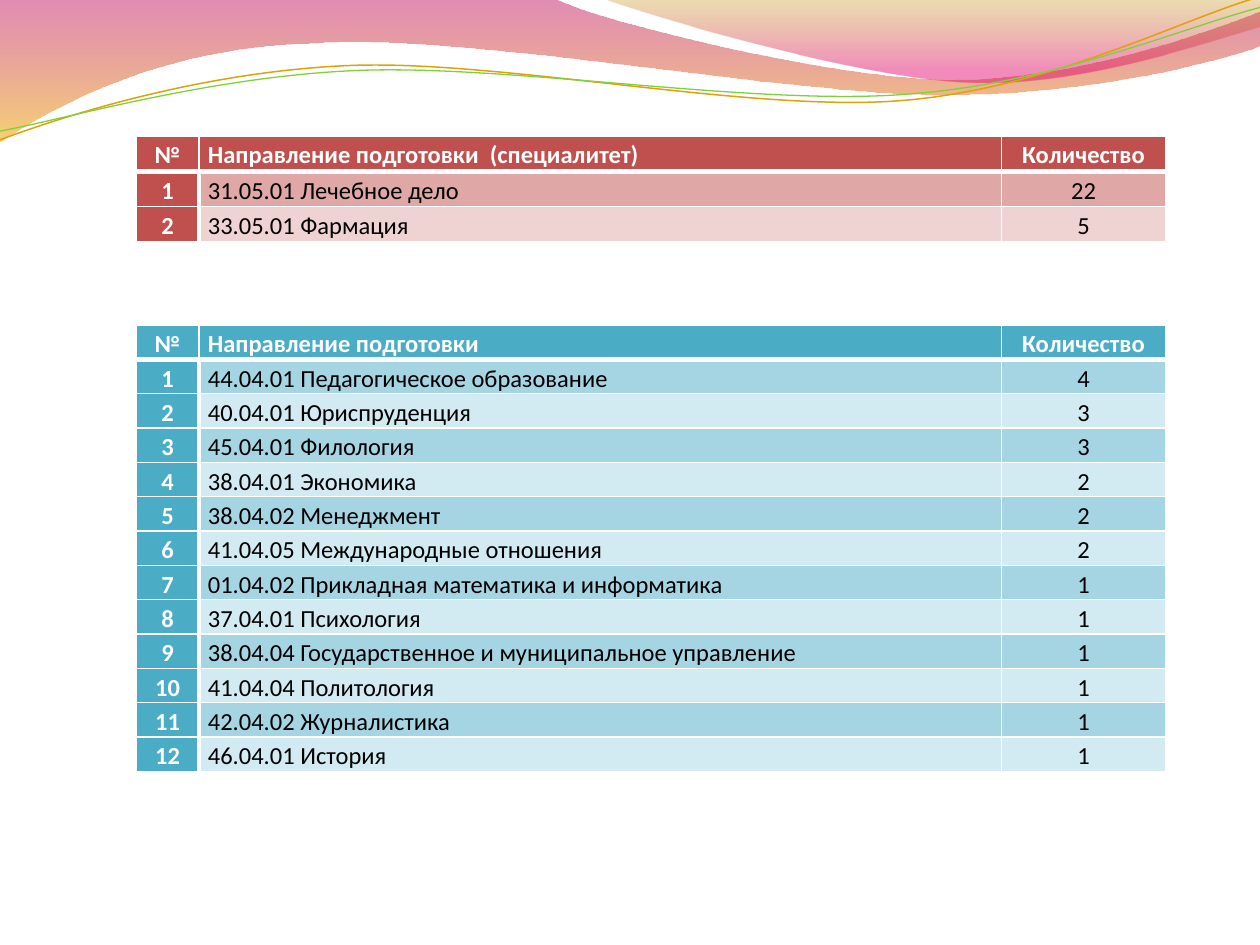
from dataclasses import dataclass
from math import cos, radians, sin

from lxml import etree
from pptx import Presentation
from pptx.dml.color import RGBColor
from pptx.enum import text
from pptx.oxml.ns import qn
from pptx.util import Inches, Pt

Point = tuple[float, float]


@dataclass(frozen=True)
class Theme:
    font: str = "Calibri"
    size: float = 14
    white: str = "FFFFFF"
    black: str = "000000"
    thin: float = 1
    thick: float = 3
    spacing: float = 1.15
    inset: float = 0.07
    left: float = 1.08
    widths: tuple = (0.5, 6.37, 1.3)
    tilt: float = 357.3


@dataclass(frozen=True)
class Stop:
    at: float
    color: str
    alpha: int


@dataclass(frozen=True)
class Band:
    """Filled wave; a leg is one point (straight) or three (cubic)."""
    start: Point
    legs: tuple
    stops: tuple


@dataclass(frozen=True)
class Wave:
    """Thin curve, tilted about its middle."""
    start: Point
    legs: tuple
    middle: Point
    color: str
    width: float


@dataclass(frozen=True)
class Grid:
    top: float
    height: float
    step: float
    title: str
    rows: tuple
    head: str
    dark: str
    light: str


THEME = Theme()

BANDS = (
    Band((0, 0), (
        ((4.4, -0.01),),
        ((4.76, 0.17), (6.64, 0.63), (7.58, 0.63)),
        ((8.53, 0.63), (9.58, 0.26), (10, 0.09)),
        ((10.01, 0.36),),
        ((9.83, 0.44), (8.7, 0.76), (7.46, 0.75)),
        ((6.22, 0.75), (3.82, 0.28), (2.57, 0.34)),
        ((1.29, 0.36), (0.46, 0.83), (-0.01, 1.13)),
        ((0, 0),),
    ), (Stop(0, "BD0059", 45), Stop(1, "F0AB00", 55))),
    Band((4.79, -0.01), (
        ((5.09, 0.11), (6.82, 0.62), (7.69, 0.65)),
        ((8.56, 0.69), (9.61, 0.32), (10, 0.21)),
        ((10, 0),),
        ((4.79, -0.01),),
    ), (Stop(0, "C38B00", 30), Stop(0.8, "E1006B", 45))),
)

WAVES = (
    Wave((0, 1.11), (
        ((0.48, 0.93), (1.58, 0.57), (2.77, 0.52)),
        ((3.95, 0.47), (5.93, 0.89), (7.13, 0.8)),
        ((8.33, 0.71), (9.38, 0.15), (9.98, -0.02)),
    ), (4.99, 0.58), "E0A209", 0.85),
    Wave((0, 1.04), (
        ((0.47, 0.96), (1.64, 0.61), (2.83, 0.56)),
        ((4.03, 0.51), (5.97, 0.84), (7.17, 0.75)),
        ((8.36, 0.67), (9.41, 0.21), (10, 0.06)),
    ), (5, 0.59), "7FD13B", 0.75),
)

GRIDS = (
    Grid(1.08, 0.83, 0.28, "Направление подготовки  (специалитет)", (
        ("31.05.01 Лечебное дело", 22),
        ("33.05.01 Фармация", 5),
    ), "C0504D", "DFA7A6", "EFD3D2"),
    Grid(2.58, 3.49, 0.22, "Направление подготовки", (
        ("44.04.01 Педагогическое образование", 4),
        ("40.04.01 Юриспруденция", 3),
        ("45.04.01 Филология", 3),
        ("38.04.01 Экономика", 2),
        ("38.04.02 Менеджмент", 2),
        ("41.04.05 Международные отношения", 2),
        ("01.04.02 Прикладная математика и информатика", 1),
        ("37.04.01 Психология", 1),
        ("38.04.04 Государственное и муниципальное управление", 1),
        ("41.04.04 Политология", 1),
        ("42.04.02 Журналистика", 1),
        ("46.04.01 История", 1),
    ), "4BACC6", "A5D5E2", "D2EAF1"),
)


def rgb(code: str) -> RGBColor:
    return RGBColor.from_string(code)


def level(point: Point, middle: Point) -> Point:
    """Take the tilt out of a point, about the middle."""
    turn = radians(360 - THEME.tilt)
    x, y = point[0] - middle[0], point[1] - middle[1]
    return (middle[0] + x * cos(turn) - y * sin(turn),
            middle[1] + x * sin(turn) + y * cos(turn))


def outline(shapes, start: Point, legs: tuple, close: bool):
    """Build the shape through all knots, then bend the cubic legs."""
    first, *rest = [(Inches(x), Inches(y))
                    for x, y in (start, *(knot for leg in legs for knot in leg))]
    pen = shapes.build_freeform(*first)
    pen.add_line_segments(rest, close=close)
    shape = pen.convert_to_shape()
    shape.shadow.inherit = False
    lines = iter(list(shape._element.spPr.iter(qn("a:lnTo"))))
    for leg in legs:
        knots = [next(lines) for _ in leg]
        if len(leg) == 3:
            curve = etree.Element(qn("a:cubicBezTo"))
            knots[0].addprevious(curve)
            for knot in knots:
                curve.append(knot[0])
                knot.getparent().remove(knot)
    return shape


def draw_band(slide, band: Band) -> None:
    shape = outline(slide.shapes, band.start, band.legs, True)
    shape.line.fill.background()
    shape.fill.gradient()
    shape.fill.gradient_angle = 270
    for slot, stop in zip(shape.fill.gradient_stops, band.stops):
        slot.position = stop.at
        slot.color.rgb = rgb(stop.color)
    for tint, stop in zip(shape._element.spPr.iter(qn("a:srgbClr")), band.stops):
        etree.SubElement(tint, qn("a:alpha"), val=str(stop.alpha * 1000))


def draw_wave(group, wave: Wave) -> None:
    legs = tuple(tuple(level(p, wave.middle) for p in leg) for leg in wave.legs)
    shape = outline(group.shapes, level(wave.start, wave.middle), legs, False)
    shape.rotation = THEME.tilt
    shape.fill.background()
    shape.line.color.rgb = rgb(wave.color)
    shape.line.width = Pt(wave.width)


def set_edges(cell, row: int, col: int) -> None:
    """White rules, thick under the header and right of the numbers."""
    body = row > 0
    heavy = {"L": body and col == 1, "R": body and col == 0,
             "T": row == 1, "B": row == 0}
    props = cell._tc.get_or_add_tcPr()
    for place, (side, bold) in enumerate(heavy.items()):
        width = Pt(THEME.thick if bold else THEME.thin)
        edge = etree.Element(qn(f"a:ln{side}"), w=str(width))
        fill = etree.SubElement(edge, qn("a:solidFill"))
        etree.SubElement(fill, qn("a:srgbClr"), val=THEME.white)
        props.insert(place, edge)


def fill_cell(cell, words: str, back: str, strong: bool, center: bool) -> None:
    cell.margin_left = cell.margin_right = Inches(THEME.inset)
    cell.margin_top = cell.margin_bottom = 0
    cell.fill.solid()
    cell.fill.fore_color.rgb = rgb(back)
    cell.text_frame.text = words
    para = cell.text_frame.paragraphs[0]
    para.line_spacing = THEME.spacing
    para.alignment = text.PP_ALIGN.CENTER if center else text.PP_ALIGN.LEFT
    font = para.runs[0].font
    font.name, font.size, font.bold = THEME.font, Pt(THEME.size), strong
    font.color.rgb = rgb(THEME.white if strong else THEME.black)


def draw_grid(slide, grid: Grid) -> None:
    lines = [("№", grid.title, "Количество")]
    lines += [(str(n), name, str(count)) for n, (name, count) in enumerate(grid.rows, 1)]
    frame = slide.shapes.add_table(
        len(lines), len(THEME.widths), Inches(THEME.left), Inches(grid.top),
        Inches(sum(THEME.widths)), Inches(grid.height))
    table = frame.table
    table.horz_banding = False
    for column, width in zip(table.columns, THEME.widths):
        column.width = Inches(width)
    for row, line in enumerate(lines):
        table.rows[row].height = Inches(grid.step)
        for col, words in enumerate(line):
            strong = row == 0 or col == 0
            back = grid.head if strong else grid.dark if row % 2 else grid.light
            cell = table.cell(row, col)
            fill_cell(cell, words, back, strong, col != 1)
            set_edges(cell, row, col)
    frame.height = Inches(grid.height)


def main() -> None:
    deck = Presentation()
    deck.slide_width, deck.slide_height = Inches(10), Inches(7.5)
    slide = deck.slides.add_slide(deck.slide_layouts[6])
    for band in BANDS:
        draw_band(slide, band)
    group = slide.shapes.add_group_shape()
    for wave in WAVES:
        draw_wave(group, wave)
    for grid in GRIDS:
        draw_grid(slide, grid)
    deck.save("out.pptx")


if __name__ == "__main__":
    main()
